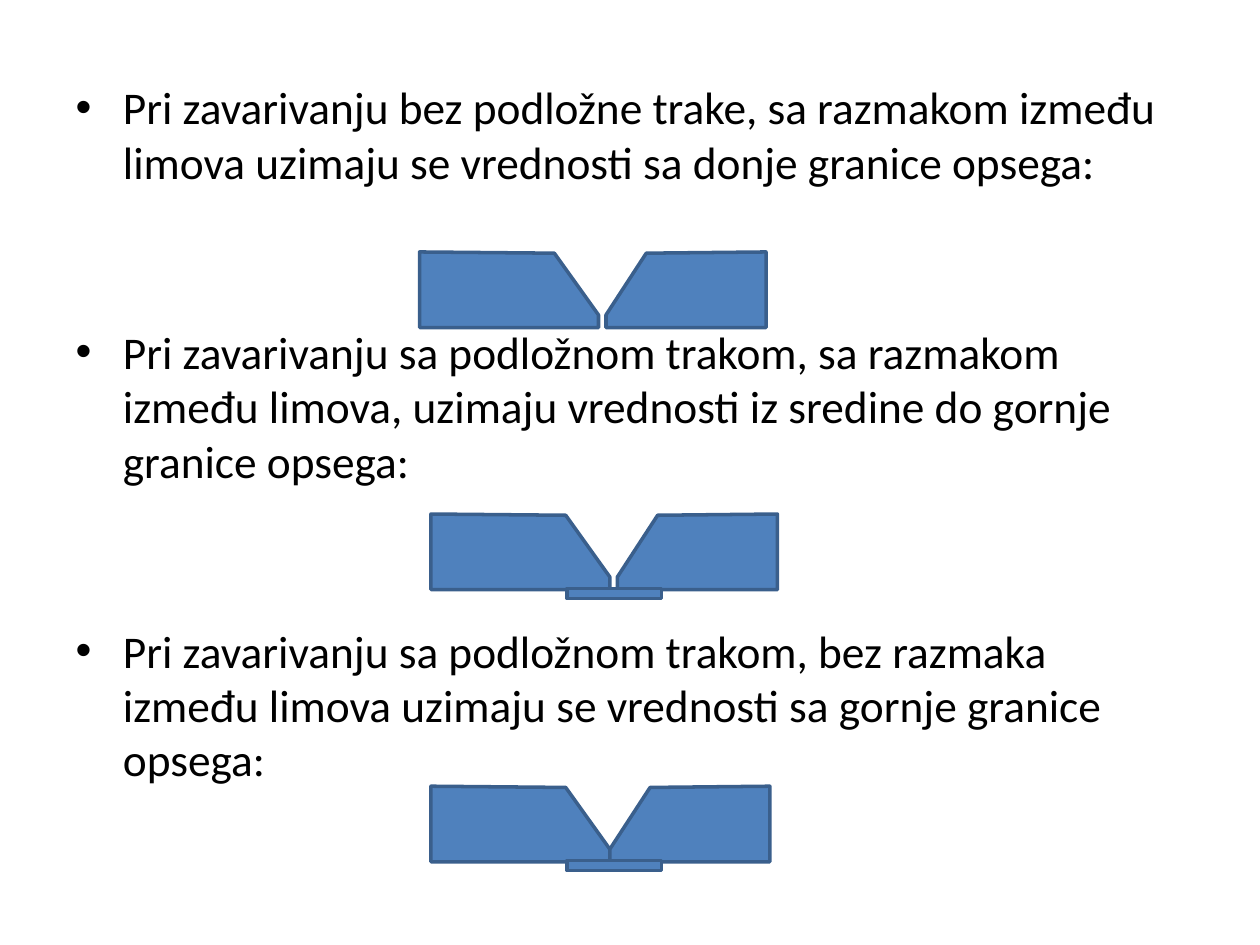
from pptx import Presentation
from pptx.dml.color import RGBColor
from pptx.enum.shapes import MSO_SHAPE as Shape
from pptx.enum.text import MSO_AUTO_SIZE as AutoSize
from pptx.util import Inches, Pt

COLORS = {"text": "000000", "steel": "4F81BD", "edge": "3A5F8C"}

RULES = [
    "Pri zavarivanju bez podložne trake, sa razmakom između limova "
    "uzimaju se vrednosti sa donje granice opsega:",
    "Pri zavarivanju sa podložnom trakom, sa razmakom između limova, "
    "uzimaju vrednosti iz sredine do gornje granice opsega:",
    "Pri zavarivanju sa podložnom trakom, bez razmaka između limova "
    "uzimaju se vrednosti sa gornje granice opsega:",
]
TEXT_FORMAT = {"name": "Calibri", "size": Pt(25.9)}
RULE_GAP = Pt(77.5)

# Left edge, top, gap between the sheets, top of the backing strip
JOINTS = [
    (3.33, 2.00, 0.06, None),
    (3.42, 4.08, 0.06, 4.67),
    (3.42, 6.24, 0, 6.83),
]
SHEET_HEIGHT, ROOT_HEIGHT = 0.6, 0.5
LEFT_WIDTH, LEFT_BEVEL = 1.42, 0.35
RIGHT_WIDTH, RIGHT_BEVEL = 1.27, 0.32
STRIP_LEFT, STRIP_WIDTH, STRIP_HEIGHT = 4.5, 0.75, 0.08


def paint(shape):
    shape.shadow.inherit = False
    shape.fill.solid()
    shape.fill.fore_color.rgb = RGBColor.from_string(COLORS["steel"])
    shape.line.color.rgb = RGBColor.from_string(COLORS["edge"])
    shape.line.width = Pt(2)


def add_sheet(slide, root, top, width, bevel, side):
    """Draw a bevelled sheet; side is -1 left of the root, 1 right of it."""
    outer = root + side * width
    outline = [
        (outer, top),
        (outer, top + SHEET_HEIGHT),
        (root, top + SHEET_HEIGHT),
        (root, top + ROOT_HEIGHT),
        (root + side * bevel, top + 0.01),
    ]
    points = [(Inches(x), Inches(y)) for x, y in outline]
    builder = slide.shapes.build_freeform(*points[0])
    builder.add_line_segments(points[1:], close=True)
    paint(builder.convert_to_shape())


def add_strip(slide, top):
    paint(slide.shapes.add_shape(
        Shape.RECTANGLE, Inches(STRIP_LEFT), Inches(top),
        Inches(STRIP_WIDTH), Inches(STRIP_HEIGHT)))


def fill_rules(body):
    body.left, body.top = Inches(0.5), Inches(0.58)
    body.width, body.height = Inches(9), Inches(6.12)
    frame = body.text_frame
    frame.auto_size = AutoSize.NONE
    for index, rule in enumerate(RULES):
        para = frame.add_paragraph() if index else frame.paragraphs[0]
        para.space_before = RULE_GAP if index else Pt(0)
        span = para.add_run()
        span.text = rule
        span.font.color.rgb = RGBColor.from_string(COLORS["text"])
        for name, value in TEXT_FORMAT.items():
            setattr(span.font, name, value)


def main():
    deck = Presentation()
    deck.slide_width, deck.slide_height = Inches(10), Inches(7.5)
    slide = deck.slides.add_slide(deck.slide_layouts[1])
    title = slide.shapes.title.element
    title.getparent().remove(title)
    fill_rules(slide.placeholders[1])

    for left, top, gap, _ in JOINTS:
        root = left + LEFT_WIDTH
        add_sheet(slide, root, top, LEFT_WIDTH, LEFT_BEVEL, -1)
        add_sheet(slide, root + gap, top, RIGHT_WIDTH, RIGHT_BEVEL, 1)
    for *_, strip_top in JOINTS:
        if strip_top is not None:
            add_strip(slide, strip_top)
    deck.save("out.pptx")


if __name__ == "__main__":
    main()
